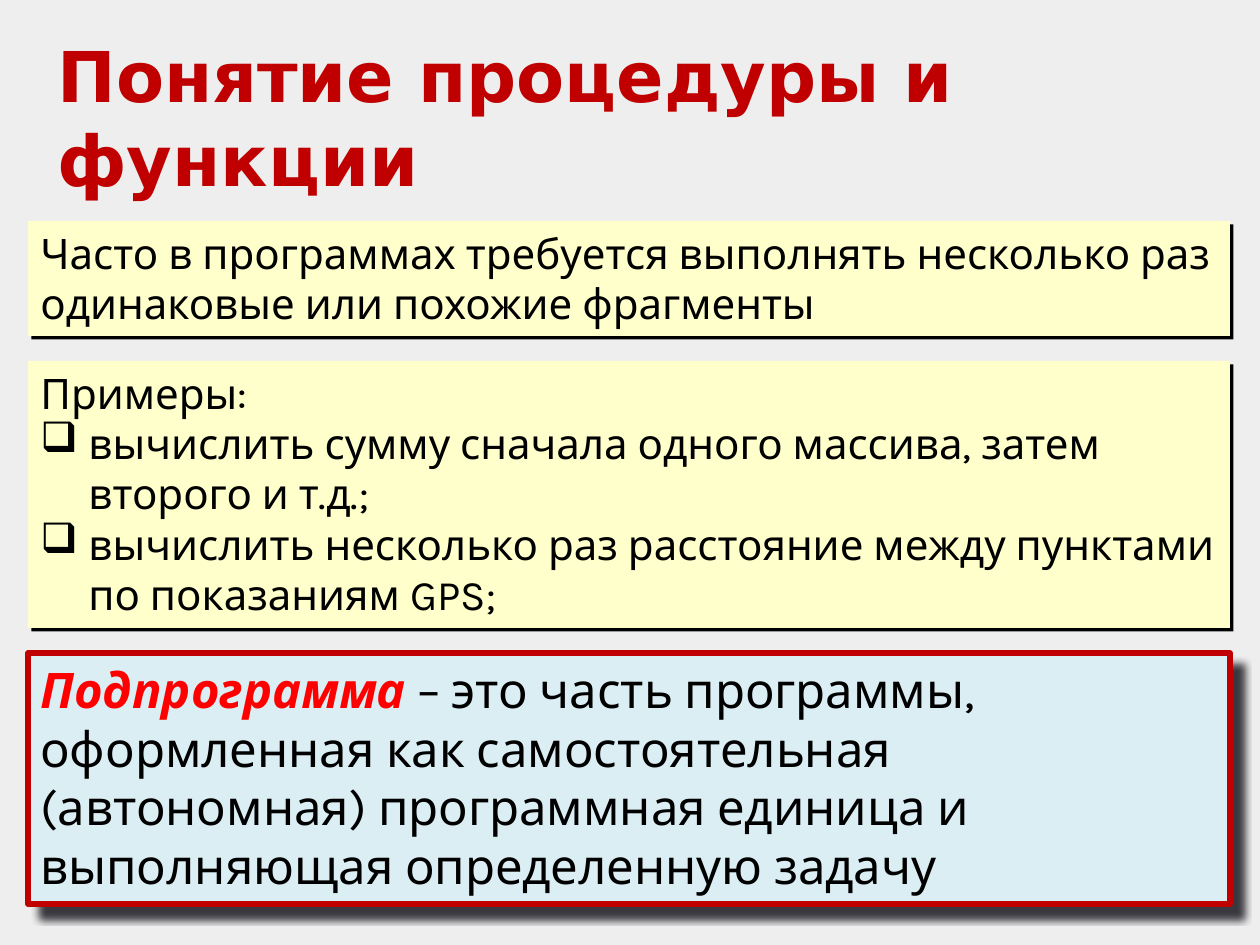
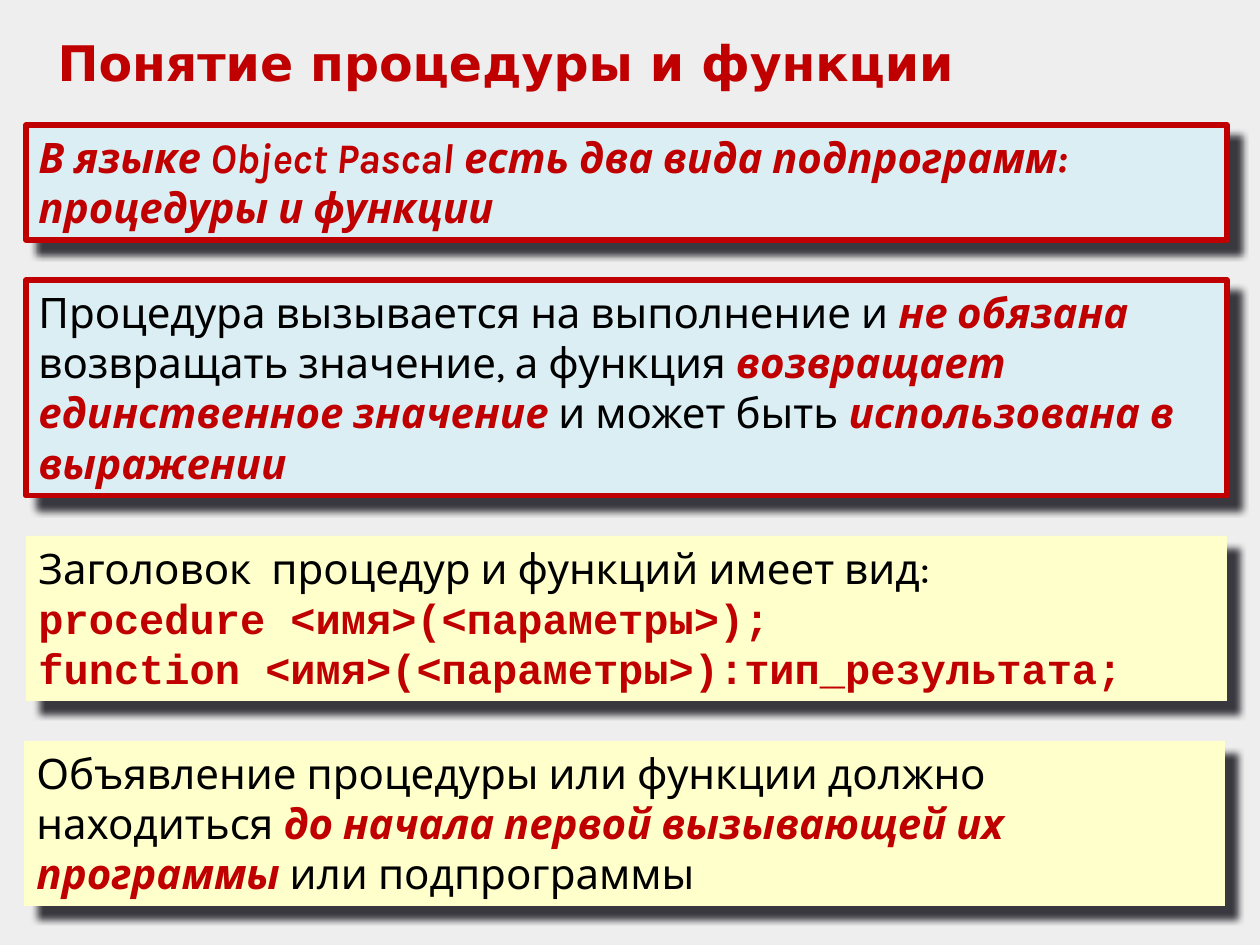
from dataclasses import dataclass

from lxml import etree
from pptx import Presentation
from pptx import util as u
from pptx.dml.color import RGBColor
from pptx.enum import shapes, text
from pptx.oxml import ns

PX = 914400 / 126
TITLE = "Понятие процедуры и функции"


@dataclass(frozen=True)
class Shadow:
    colour: str
    opacity: int
    blur: float
    distance: float


@dataclass(frozen=True)
class Span:
    font: str
    colour: str
    bold: bool = False
    italic: bool = False


@dataclass(frozen=True)
class Panel:
    fill: str
    shadow: Shadow
    bordered: bool = False


@dataclass(frozen=True)
class Theme:
    background: str = "EEEEEE"
    accent: str = "C00000"
    note: str = "FFFFCC"
    definition: str = "DBEEF4"
    soft: Shadow = Shadow("03020A", 76, 4, 10)
    hard: Shadow = Shadow("000000", 100, 0, 2.8)
    heading: Span = Span("DejaVu Sans", "C00000", True)
    body: Span = Span("Karla", "000000")
    key: Span = Span("Karla", "C00000", True, True)
    term: Span = Span("Karla", "FF0000", True, True)
    code: Span = Span("Courier New", "C00000", True)
    big_title: int = 40
    large: int = 28
    regular: int = 24
    border: int = 3
    bullet: str = "❑"
    bullet_indent: int = 48


THEME = Theme()
SOFT_NOTE = Panel(THEME.note, THEME.soft)
HARD_NOTE = Panel(THEME.note, THEME.hard)
DEFINITION = Panel(THEME.definition, THEME.soft, True)


def px(length):
    return u.Emu(round(length * PX))


def colour(value):
    return RGBColor.from_string(value)


class Builder:
    def __init__(self, theme):
        self.theme = theme
        self.deck = Presentation()
        self.deck.slide_width, self.deck.slide_height = px(1260), px(945)
        fill = self.deck.slide_master.background.fill
        fill.solid()
        fill.fore_color.rgb = colour(theme.background)
        self.page = None

    def add_page(self, title, size, height):
        self.page = self.deck.slides.add_slide(self.deck.slide_layouts[5])
        box = self.page.shapes.title
        box.left, box.top, box.width, box.height = map(px, (45, 26, 1169, height))
        box.text_frame.text = title
        self.fit(box.text_frame)
        para = box.text_frame.paragraphs[0]
        para.alignment = text.PP_ALIGN.LEFT
        self.style(para.runs[0], self.theme.heading, size)

    def fit(self, frame):
        frame.word_wrap = True
        frame.vertical_anchor = text.MSO_ANCHOR.TOP
        frame.auto_size = text.MSO_AUTO_SIZE.SHAPE_TO_FIT_TEXT

    def style(self, run, span, size):
        font = run.font
        font.name, font.size = span.font, u.Pt(size)
        font.bold, font.italic = span.bold, span.italic
        font.color.rgb = colour(span.colour)

    def add_shadow(self, box, shadow):
        box.shadow.inherit = False
        effects = box._element.spPr.find(ns.qn("a:effectLst"))
        outer = etree.SubElement(
            effects, ns.qn("a:outerShdw"), blurRad=str(u.Pt(shadow.blur)),
            dist=str(u.Pt(shadow.distance)), dir=str(45 * 60000),
            algn="tl", rotWithShape="0")
        tint = etree.SubElement(outer, ns.qn("a:srgbClr"), val=shadow.colour)
        etree.SubElement(tint, ns.qn("a:alpha"), val=str(shadow.opacity * 1000))

    def add_bullet(self, para):
        indent = px(self.theme.bullet_indent)
        properties = para._p.get_or_add_pPr()
        properties.set("marL", str(indent))
        properties.set("indent", str(-indent))
        etree.SubElement(properties, ns.qn("a:buChar"), char=self.theme.bullet)

    def add_panel(self, place, panel, paragraphs, size, bulleted=False):
        box = self.page.shapes.add_shape(
            shapes.MSO_SHAPE.RECTANGLE, *map(px, place))
        box.fill.solid()
        box.fill.fore_color.rgb = colour(panel.fill)
        if panel.bordered:
            box.line.color.rgb = colour(self.theme.accent)
            box.line.width = u.Pt(self.theme.border)
        else:
            box.line.fill.background()
        self.add_shadow(box, panel.shadow)
        frame = box.text_frame
        self.fit(frame)
        for index, spans in enumerate(paragraphs):
            para = frame.add_paragraph() if index else frame.paragraphs[0]
            para.alignment = text.PP_ALIGN.LEFT
            if bulleted and index:
                self.add_bullet(para)
            for words, span in spans:
                run = para.add_run()
                run.text = words
                self.style(run, span, size)

    def add_stack(self, top, width, gap, panels):
        for left, height, panel, paragraphs, size, bulleted in panels:
            self.add_panel((left, top, width, height), panel, paragraphs,
                           size, bulleted)
            top += height + gap


def main():
    theme = THEME
    body, key, code = theme.body, theme.key, theme.code
    builder = Builder(theme)

    builder.add_page(TITLE, theme.big_title, 183)
    repetition = [[("Часто в программах требуется выполнять несколько раз "
                    "одинаковые или похожие фрагменты", body)]]
    examples = [
        [("Примеры:", body)],
        [("вычислить сумму сначала одного массива, затем второго и т.д.;", body)],
        [("вычислить несколько раз расстояние между пунктами "
          "по показаниям GPS;", body)],
    ]
    subprogram = [[
        ("Подпрограмма ", theme.term),
        ("– это часть программы, оформленная как самостоятельная (автономная) "
         "программная единица и выполняющая определенную задачу", body),
    ]]
    builder.add_stack(221, 1202, 25, [
        (28, 115, HARD_NOTE, repetition, theme.regular, False),
        (28, 267, HARD_NOTE, examples, theme.regular, True),
        (28, 251, DEFINITION, subprogram, theme.large, False),
    ])

    builder.add_page(TITLE, theme.large, 72)
    kinds = [[("В языке Object Pascal есть два вида подпрограмм: "
               "процедуры и функции", key)]]
    difference = [[
        ("Процедура вызывается на выполнение и ", body),
        ("не обязана ", key),
        ("возвращать значение, а функция ", body),
        ("возвращает единственное значение ", key),
        ("и может быть ", body),
        ("использована в выражении", key),
    ]]
    headers = [
        [("Заголовок  процедур и функций имеет вид:", body)],
        [("procedure <имя>(<параметры>);", code)],
        [("function <имя>(<параметры>):тип_результата;", code)],
    ]
    declaration = [[
        ("Объявление процедуры или функции должно находиться ", body),
        ("до начала первой вызывающей их программы ", key),
        ("или подпрограммы", body),
    ]]
    builder.add_stack(125, 1201, 40, [
        (26, 115, DEFINITION, kinds, theme.regular, False),
        (26, 216, DEFINITION, difference, theme.regular, False),
        (26, 165, SOFT_NOTE, headers, theme.regular, False),
        (24, 165, SOFT_NOTE, declaration, theme.regular, False),
    ])

    builder.deck.save("out.pptx")


if __name__ == "__main__":
    main()
